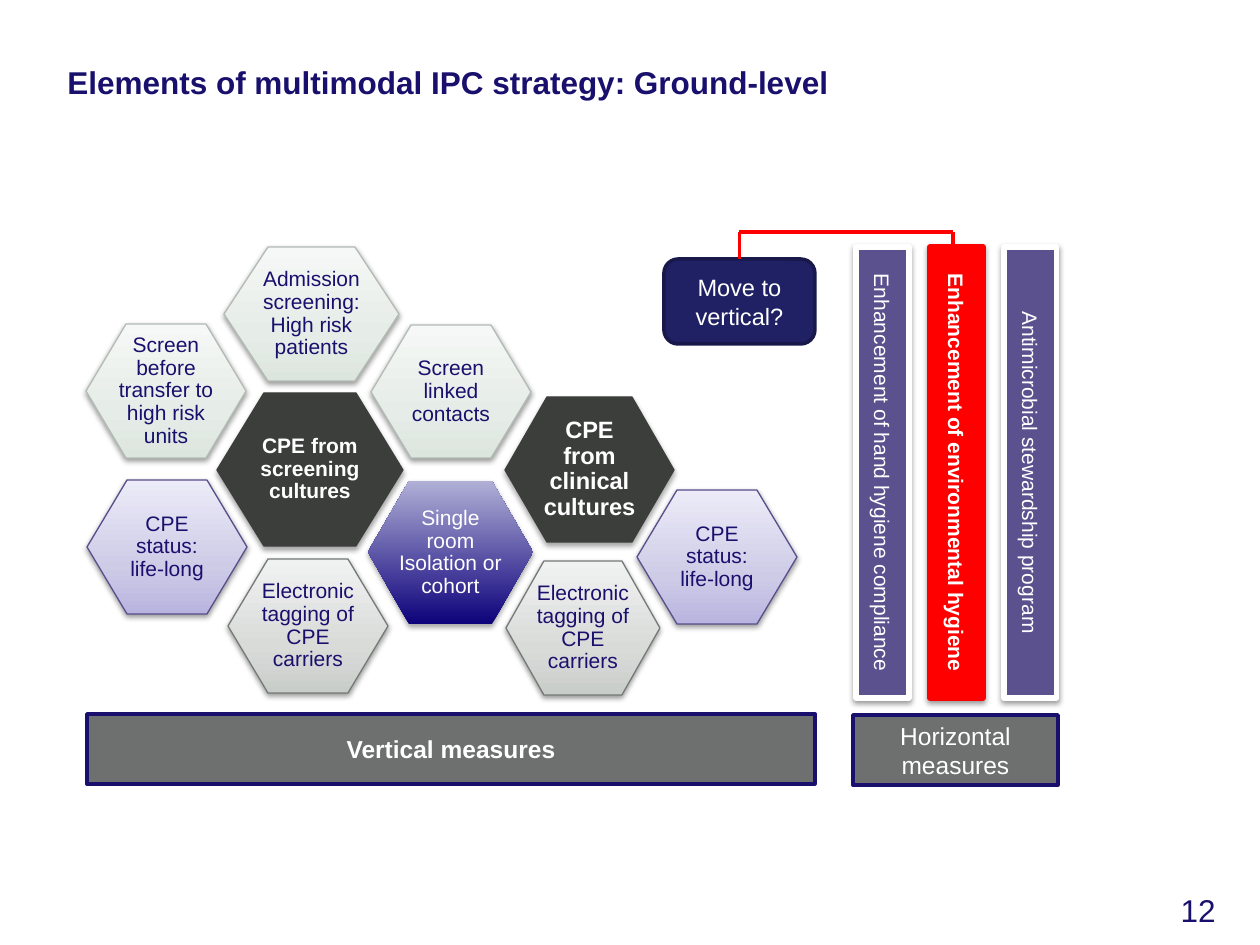
from lxml import etree
from pptx import Presentation
from pptx import util as u
from pptx.dml import color
from pptx.enum import shapes, text
from pptx.oxml import ns

EMU_PER_PX = 914400 / 126
NAVY, WHITE, CHARCOAL, GREY = "19106D", "FFFFFF", "3C3E3C", "6D706E"
PURPLE, RED = "5B518E", "FF0000"

# Gradients run from bottom to top: (position in percent, colour)
GREEN_FADE = [(0, "DCE5DE"), (35, "E6ECE7"), (100, "F5F8F6")]
GREY_FADE = [(0, "C9CDCA"), (35, "D9DBD9"), (100, "F0F1F1")]
LILAC_FADE = [(0, "B9B4DF"), (35, "CECBE7"), (100, "ECEBF7")]
BLUE_FADE = [(0, "0E027B"), (100, "B0AFD6")]

# Kind of hexagon: fill, line colour, text colour, bold, insets (x, y)
KINDS = {
    "source": (CHARCOAL, CHARCOAL, WHITE, True, (36, 32)),
    "screen": (GREEN_FADE, "B3BBB5", NAVY, False, (30, 26)),
    "tagging": (GREY_FADE, "757A76", NAVY, False, (30, 26)),
    "status": (LILAC_FADE, "584E8C", NAVY, False, (30, 26)),
    "isolation": (BLUE_FADE, None, WHITE, False, (30, 26)),
}
HEXAGONS = [
    ("source", (217, 393, 186, 153), "CPE from screening cultures", 12),
    ("screen", (224, 247, 175, 134), "Admission screening: High risk patients", 12),
    ("screen", (371, 325, 160, 133), "Screen linked contacts", 12),
    ("isolation", (368, 481, 165, 143), "Single room Isolation or cohort", 12),
    ("tagging", (228, 559, 160, 134), "Electronic tagging of CPE carriers", 12),
    ("status", (87, 480, 160, 134), "CPE status: life-long", 12),
    ("screen", (86, 324, 160, 134), "Screen before transfer to high risk units", 12),
    ("source", (505, 397, 169, 145), "CPE from clinical cultures", 13.5),
    ("tagging", (506, 561, 154, 134), "Electronic tagging of CPE carriers", 12),
    ("status", (637, 490, 160, 134), "CPE status: life-long", 12),
]
BARS = [
    ("Enhancement of hand hygiene compliance", PURPLE, WHITE, False),
    ("Enhancement of environmental hygiene", RED, RED, True),
    ("Antimicrobial stewardship program", PURPLE, WHITE, False),
]


def px(length):
    return u.Emu(round(length * EMU_PER_PX))


def rgb(value):
    return color.RGBColor.from_string(value)


def write(shape, wording, size, ink, bold=False, align=text.PP_ALIGN.CENTER):
    frame = shape.text_frame
    frame.word_wrap = True
    frame.vertical_anchor = text.MSO_ANCHOR.MIDDLE
    frame.text = wording
    paragraph = frame.paragraphs[0]
    paragraph.alignment = align
    font = paragraph.runs[0].font
    font.name, font.size, font.bold = "Arial", u.Pt(size), bold
    font.color.rgb = rgb(ink)
    return frame


def paint(shape, fill, line, width):
    """Fill with one colour or a list of gradient stops, and outline."""
    shape.shadow.inherit = False
    if isinstance(fill, str):
        shape.fill.solid()
        shape.fill.fore_color.rgb = rgb(fill)
    else:
        shape.fill.gradient()
        shape.fill.gradient_angle = 90
        stops = shape.element.spPr.find(".//" + ns.qn("a:gsLst"))
        for stop in list(stops):
            stops.remove(stop)
        for position, value in fill:
            stop = etree.SubElement(stops, ns.qn("a:gs"), pos=str(position * 1000))
            etree.SubElement(stop, ns.qn("a:srgbClr"), val=value)
    if line is None:
        shape.line.fill.background()
    else:
        shape.line.color.rgb = rgb(line)
        shape.line.width = u.Pt(width)


def cast_shadow(shape, distance, opacity):
    effects = shape.element.spPr.find(ns.qn("a:effectLst"))
    shadow = etree.SubElement(
        effects, ns.qn("a:outerShdw"), blurRad=str(u.Pt(3.1)),
        dist=str(u.Pt(distance)), dir="5400000", rotWithShape="0")
    ink = etree.SubElement(shadow, ns.qn("a:srgbClr"), val="000000")
    etree.SubElement(ink, ns.qn("a:alpha"), val=str(opacity * 1000))


def add_hexagon(slide, kind, box, wording, size):
    fill, line, ink, bold, (inset_x, inset_y) = KINDS[kind]
    left, top, width, height = box
    right, bottom, middle = left + width, top + height, top + height / 2
    corner = width / 4
    builder = slide.shapes.build_freeform(left, middle, scale=EMU_PER_PX)
    builder.add_line_segments([
        (left + corner, top), (right - corner, top), (right, middle),
        (right - corner, bottom), (left + corner, bottom)], close=True)
    hexagon = builder.convert_to_shape()
    paint(hexagon, fill, line, 0.75)
    if kind in ("source", "isolation"):
        cast_shadow(hexagon, 1.8, 35)
    else:
        cast_shadow(hexagon, 1.6, 38)
    frame = write(hexagon, wording, size, ink, bold)
    frame.margin_left = frame.margin_right = px(inset_x)
    frame.margin_top = frame.margin_bottom = px(inset_y)
    frame.paragraphs[0].line_spacing = 0.9


def add_panel(slide, box, wording, size, fill, line, width=2, bold=False,
              outline=shapes.MSO_SHAPE.RECTANGLE):
    panel = slide.shapes.add_shape(outline, *map(px, box))
    paint(panel, fill, line, width)
    write(panel, wording, size, WHITE, bold)
    return panel


def add_bar(slide, index, wording, fill, line, bold):
    """Add one upright bar with its wording turned clockwise."""
    bar = add_panel(slide, (856 + 74 * index, 247, 53, 451), wording, 12,
                    fill, line, 3, bold)
    cast_shadow(bar, 1.6, 38)
    bar.element.txBody.bodyPr.set("vert", "vert")


def add_link(slide, start, end):
    link = slide.shapes.add_connector(
        shapes.MSO_CONNECTOR.STRAIGHT, *map(px, start + end))
    link.line.color.rgb = rgb(RED)
    link.line.width = u.Pt(2.25)
    etree.SubElement(link.element.spPr, ns.qn("a:effectLst"))
    return link


def add_label(slide, box, wording, bold, align):
    label = slide.shapes.add_textbox(*map(px, box))
    return write(label, wording, 18, NAVY, bold, align)


def main():
    deck = Presentation()
    deck.slide_width, deck.slide_height = px(1260), px(945)
    slide = deck.slides.add_slide(deck.slide_layouts[6])

    add_label(slide, (55, 35, 929, 93),
              "Elements of multimodal IPC strategy: Ground-level",
              True, text.PP_ALIGN.LEFT)
    for hexagon in HEXAGONS:
        add_hexagon(slide, *hexagon)
    for index, bar in enumerate(BARS):
        add_bar(slide, index, *bar)
    add_panel(slide, (87, 714, 728, 70), "Vertical measures", 14, GREY, NAVY, bold=True)
    add_panel(slide, (853, 715, 205, 70), "Horizontal measures", 14, GREY, NAVY)

    question = add_panel(slide, (664, 259, 151, 85), "Move to vertical?", 13.5,
                         "202164", "18184A",
                         outline=shapes.MSO_SHAPE.ROUNDED_RECTANGLE)
    route = [(739.5, 259), (739.5, 232), (953, 232), (953, 247)]
    links = [add_link(slide, *ends) for ends in zip(route, route[1:])]
    links[0].begin_connect(question, 0)

    number = add_label(slide, (1168, 885, 60, 50), "12", False, text.PP_ALIGN.RIGHT)
    number.word_wrap = False
    deck.save("out.pptx")


if __name__ == "__main__":
    main()
